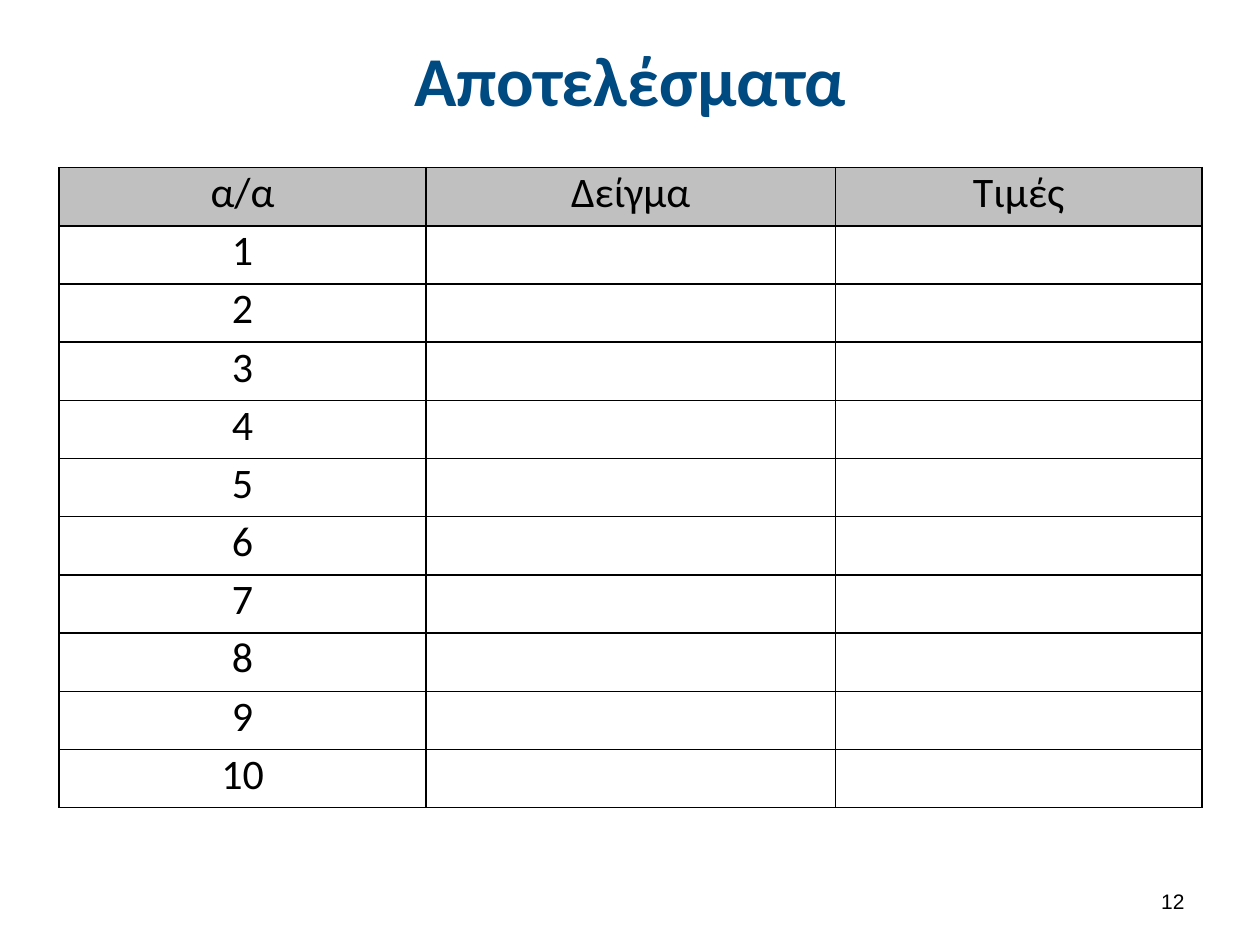
from dataclasses import dataclass

from lxml import etree
from pptx import Presentation
from pptx.dml.color import RGBColor
from pptx.enum.text import MSO_ANCHOR, PP_ALIGN
from pptx.oxml.ns import qn
from pptx.util import Inches, Pt

CENTER, RIGHT = PP_ALIGN.CENTER, PP_ALIGN.RIGHT
TOP, MIDDLE = MSO_ANCHOR.TOP, MSO_ANCHOR.MIDDLE
TITLE_ONLY_LAYOUT = 5


@dataclass(frozen=True)
class Theme:
    heading: str = "004A82"
    text: str = "000000"
    header_fill: str = "C0C0C0"
    border: str = "000000"
    border_width: float = 1
    body_font: str = "Calibri"
    number_font: str = "Arial"
    title_size: int = 40
    table_size: int = 24
    number_size: int = 12


THEME = Theme()


def format_paragraph(paragraph, alignment, font_name, size, color, bold=False):
    paragraph.alignment = alignment
    font = paragraph.font
    font.name = font_name
    font.size = Pt(size)
    font.bold = bold
    font.color.rgb = RGBColor.from_string(color)


def add_title(slide, text):
    title = slide.shapes.title
    title.left, title.top = Inches(0), Inches(0.13)
    title.width, title.height = Inches(10), Inches(0.99)
    title.text_frame.text = text
    title.text_frame.vertical_anchor = MIDDLE
    format_paragraph(title.text_frame.paragraphs[0], CENTER, THEME.body_font,
                     THEME.title_size, THEME.heading, bold=True)


def add_borders(cell):
    """Draw all four cell edges; they must precede the fill in tcPr."""
    properties = cell._tc.get_or_add_tcPr()
    for index, edge in enumerate(("a:lnL", "a:lnR", "a:lnT", "a:lnB")):
        line = etree.Element(qn(edge), w=str(Pt(THEME.border_width)))
        fill = etree.SubElement(line, qn("a:solidFill"))
        etree.SubElement(fill, qn("a:srgbClr"), val=THEME.border)
        properties.insert(index, line)


def format_cell(cell, text, is_header):
    cell.text = text
    cell.margin_left = cell.margin_right = Inches(0.07)
    cell.margin_top = cell.margin_bottom = 0
    cell.vertical_anchor = TOP
    if is_header:
        cell.fill.solid()
        cell.fill.fore_color.rgb = RGBColor.from_string(THEME.header_fill)
    else:
        cell.fill.background()
    format_paragraph(cell.text_frame.paragraphs[0], CENTER, THEME.body_font,
                     THEME.table_size, THEME.text)
    add_borders(cell)


def add_results_table(slide, rows, column_widths):
    height = Inches(5.08)
    frame = slide.shapes.add_table(len(rows), len(column_widths), Inches(0.47), Inches(1.33),
                                   Inches(sum(column_widths)), height)
    table = frame.table
    for column, width in zip(table.columns, column_widths):
        column.width = Inches(width)
    for row_index, values in enumerate(rows):
        table.rows[row_index].height = height // len(rows)
        for column_index, value in enumerate(values):
            format_cell(table.cell(row_index, column_index), value, row_index == 0)


def add_slide_number(slide, number):
    box = slide.shapes.add_textbox(Inches(7.17), Inches(6.95), Inches(2.33), Inches(0.4))
    frame = box.text_frame
    frame.word_wrap = True
    frame.vertical_anchor = MIDDLE
    frame.text = number
    format_paragraph(frame.paragraphs[0], RIGHT, THEME.number_font,
                     THEME.number_size, THEME.text)


def main():
    presentation = Presentation()
    presentation.slide_width, presentation.slide_height = Inches(10), Inches(7.5)
    slide = presentation.slides.add_slide(presentation.slide_layouts[TITLE_ONLY_LAYOUT])
    add_title(slide, "Αποτελέσματα")
    header = ("α/α", "Δείγμα", "Τιμές")
    samples = [(str(number), "", "") for number in range(1, 11)]
    add_results_table(slide, [header, *samples], (2.91, 3.25, 2.91))
    add_slide_number(slide, "12")
    presentation.save("out.pptx")


if __name__ == "__main__":
    main()
